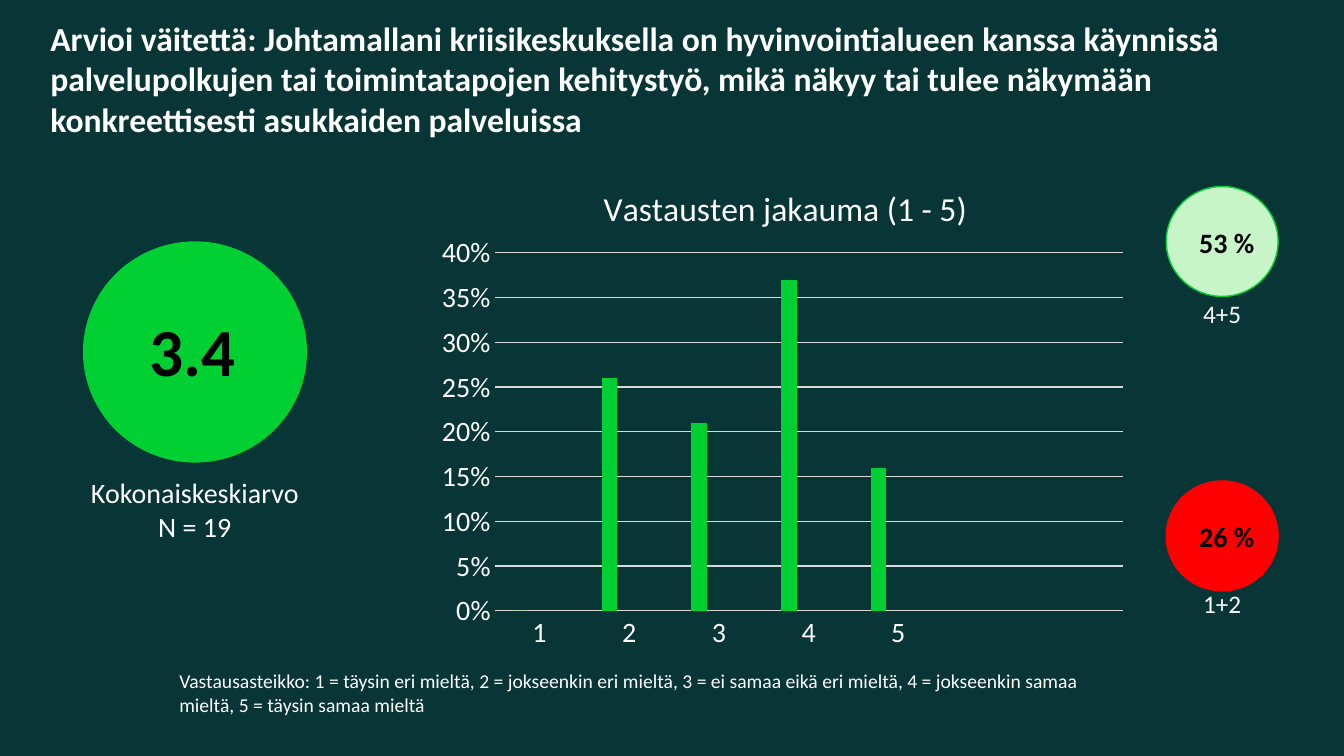
from lxml import etree
from pptx import Presentation
from pptx.chart.data import CategoryChartData as ChartData
from pptx.dml.color import RGBColor as Rgb
from pptx.enum.chart import XL_CHART_TYPE as Kind, XL_TICK_MARK as Tick
from pptx.enum.shapes import MSO_SHAPE as Shape
from pptx.enum.text import PP_ALIGN as Align
from pptx.util import Cm, Pt

HUES = {"back": "083535", "green": "00D032", "pale": "C8F5C8", "red": "FF0000",
        "dark": "19413D", "grid": "D9D9D9", "white": "FFFFFF", "black": "000000"}
FACE = "Calibri"


def hue(name):
    return Rgb.from_string(HUES[name])


def style(font, size, color="white", bold=False):
    font.name, font.size, font.bold = FACE, Pt(size), bold
    font.color.rgb = hue(color)


def label(slide, box, text, size, color="white", bold=False, align=Align.LEFT, wrap=True):
    frame = slide.shapes.add_textbox(*map(Cm, box)).text_frame
    frame.word_wrap = wrap
    frame.text = text
    for para in frame.paragraphs:
        para.alignment = align
        for run in para.runs:
            style(run.font, size, color, bold)


def disc(slide, box, fill, line):
    oval = slide.shapes.add_shape(Shape.OVAL, *map(Cm, box))
    oval.shadow.inherit = False
    oval.fill.solid()
    oval.fill.fore_color.rgb = hue(fill)
    oval.line.color.rgb = hue(line)
    oval.line.width = Pt(1)


def mean(slide, box, value, text):
    """Large disc with the average and a caption below."""
    x, y, w, h = box
    disc(slide, box, "green", "green")
    label(slide, (x + 1.42, y + 1.57, 2.74, 2.31), value, 48, "black", True)
    label(slide, (x - 0.26, y + h + 0.22, w + 0.51, 1.96), text, 20, align=Align.CENTER)


def badge(slide, box, share, text, fill, line, drop):
    """Small disc with a share and, drop below its top, the answers it sums."""
    x, y = box[:2]
    disc(slide, box, fill, line)
    label(slide, (x + 0.58, y + 0.85, 1.9, 1.12), share, 20, "black", True, wrap=False)
    label(slide, (x + 0.68, y + drop, 2.36, 1.02), text, 18)


def place(part, **parts):
    """Fix a chart part at fractions of the chart area."""
    ns = "{http://schemas.openxmlformats.org/drawingml/2006/chart}"
    layout = part.find(ns + "layout")
    if layout is None:
        layout = etree.Element(ns + "layout")
        text = part.find(ns + "tx")
        part.insert(0 if text is None else 1, layout)
    manual = etree.SubElement(layout, ns + "manualLayout")
    for name, value in parts.items():
        etree.SubElement(manual, ns + name).set("val", str(value))


def bars(slide, box):
    data = ChartData(number_format="0%")
    data.categories = ["1", "2", "3", "4", "5", "", ""]
    data.add_series("Series 1", [0, 0.26, 0.21, 0.37, 0.16, None, None])
    for name in ("Series 2", "Series 3"):
        data.add_series(name, [None] * 7)
    chart = slide.shapes.add_chart(Kind.COLUMN_CLUSTERED, *map(Cm, box), data).chart
    style(chart.font, 10, "black")
    chart.has_legend = False

    frame = chart.chart_title.text_frame
    frame.text = "Vastausten jakauma (1 - 5)"
    style(frame.paragraphs[0].runs[0].font, 24)
    place(chart.chart_title._element, xMode="edge", yMode="edge", x=0.24, y=0.04)
    place(chart.plots[0]._element.getparent(), layoutTarget="inner", xMode="edge",
          yMode="edge", x=0.095, y=0.185, w=0.885, h=0.716)

    plot = chart.plots[0]
    plot.gap_width, plot.overlap, plot.vary_by_categories = 219, -27, False
    for series, color in zip(plot.series, ("green", "dark", "pale")):
        series.format.fill.solid()
        series.format.fill.fore_color.rgb = hue(color)

    cats, vals = chart.category_axis, chart.value_axis
    for axis in (cats, vals):
        axis.major_tick_mark = axis.minor_tick_mark = Tick.NONE
        style(axis.tick_labels.font, 20)
    vals.minimum_scale, vals.maximum_scale, vals.major_unit = 0, 0.4, 0.05
    vals.tick_labels.number_format = "0%"
    vals.tick_labels.number_format_is_linked = False
    vals.format.line.fill.background()
    for line in (cats.format.line, vals.major_gridlines.format.line):
        line.color.rgb = hue("grid")
        line.width = Pt(0.75)


def main():
    deck = Presentation()
    deck.slide_width, deck.slide_height = Cm(33.87), Cm(19.05)
    slide = deck.slides.add_slide(deck.slide_layouts[6])
    slide.background.fill.solid()
    slide.background.fill.fore_color.rgb = hue("back")

    label(slide, (1.02, 0.33, 32.84, 2.77),
          "Arvioi väitettä: Johtamallani kriisikeskuksella on hyvinvointialueen kanssa "
          "käynnissä palvelupolkujen tai toimintatapojen kehitystyö, mikä näkyy tai tulee "
          "näkymään konkreettisesti asukkaiden palveluissa", 24, bold=True)
    mean(slide, (2.11, 6.1, 5.61, 5.54), "3.4", "Kokonaiskeskiarvo\nN = 19")
    bars(slide, (10.77, 4.04, 17.88, 12.6))
    label(slide, (4.27, 16.74, 24.38, 1.45),
          "Vastausasteikko: 1 = täysin eri mieltä, 2 = jokseenkin eri mieltä, "
          "3 = ei samaa eikä eri mieltä, 4 = jokseenkin samaa mieltä, "
          "5 = täysin samaa mieltä", 14)
    badge(slide, (29.39, 4.7, 2.82, 2.77), "53 %", "4+5", "pale", "green", 2.69)
    badge(slide, (29.39, 12.12, 2.82, 2.77), "26 %", "1+2", "red", "red", 2.59)
    deck.save("out.pptx")


if __name__ == "__main__":
    main()
